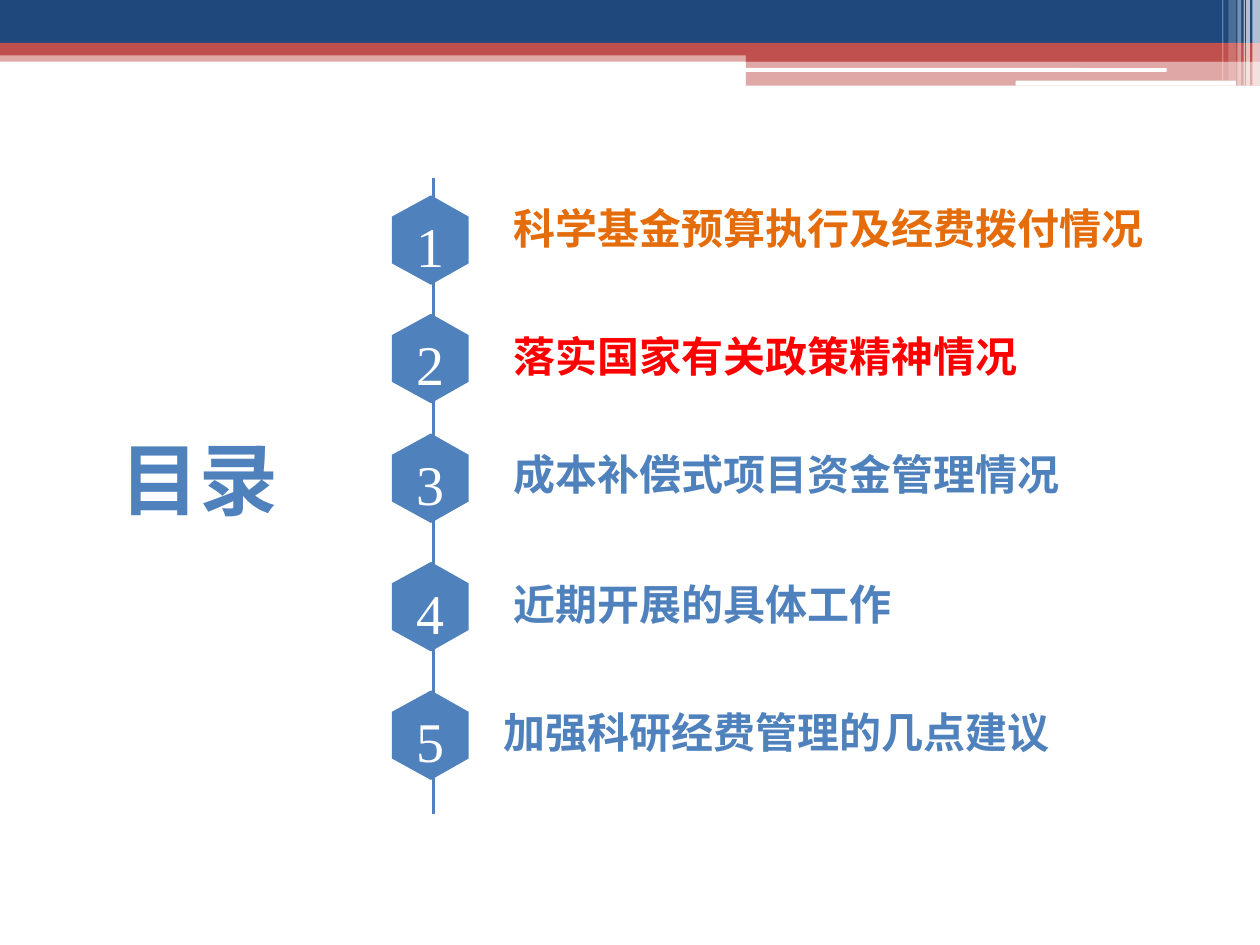
import dataclasses

import lxml.etree
import pptx
import pptx.dml.color
import pptx.enum.shapes
import pptx.enum.text
import pptx.oxml.ns
import pptx.util

RGBColor = pptx.dml.color.RGBColor
Shapes = pptx.enum.shapes.MSO_SHAPE
Align = pptx.enum.text.PP_ALIGN

EMU_PER_PX = 9144  # 100 px to the inch

NAVY = RGBColor(0x1F, 0x49, 0x7D)
BRICK = RGBColor(0xC0, 0x50, 0x4D)
WHITE = RGBColor(0xFF, 0xFF, 0xFF)
BLUE = RGBColor(0x4F, 0x81, 0xBD)
ORANGE = RGBColor(0xE4, 0x6C, 0x0A)
RED = RGBColor(0xFF, 0x00, 0x00)

SERIF = "Times New Roman"
SANS = "Noto Sans CJK SC"

HEXAGON_LEFT, HEXAGON_WIDTH, HEXAGON_HEIGHT = 311, 61, 71
LABEL_HEIGHT = 50


@dataclasses.dataclass
class Band:
    left: int
    top: int
    width: int
    height: int
    color: RGBColor
    opacity: int = 100
    rounded: bool = False


@dataclasses.dataclass
class Topic:
    text: str
    hexagon_top: int
    label_top: int
    label_left: int = 398
    color: RGBColor = BLUE


BANDS = [
    Band(0, 40, 1000, 9, BRICK, 50),
    Band(0, 0, 1000, 34, NAVY),
    Band(0, 34, 1000, 10, BRICK),
    Band(592, 39, 408, 10, BRICK),
    Band(592, 48, 408, 20, BRICK, 50),
    Band(591, 54, 335, 3, WHITE, rounded=True),
    Band(806, 64, 175, 4, WHITE, rounded=True),
    Band(994, 0, 6, 68, WHITE, 65),
    Band(989, 0, 3, 68, WHITE, 65),
    Band(987, 0, 1, 68, WHITE, 60),
    Band(982, 0, 3, 68, WHITE, 40),
    Band(975, 0, 6, 64, WHITE, 20),
    Band(970, 0, 1, 64, WHITE, 30),
]

TOPICS = [
    Topic("科学基金预算执行及经费拨付情况", 155, 156, color=ORANGE),
    Topic("落实国家有关政策精神情况", 249, 257, color=RED),
    Topic("成本补偿式项目资金管理情况", 344, 351),
    Topic("近期开展的具体工作", 446, 454),
    Topic("加强科研经费管理的几点建议", 548, 556, label_left=390),
]


def px(length: int) -> pptx.util.Emu:
    return pptx.util.Emu(length * EMU_PER_PX)


def paint(shape, color: RGBColor, opacity: int = 100) -> None:
    shape.shadow.inherit = False
    shape.fill.solid()
    shape.fill.fore_color.rgb = color
    shape.line.fill.background()
    if opacity < 100:
        color_node = shape.fill._xPr.find(".//" + pptx.oxml.ns.qn("a:srgbClr"))
        alpha = lxml.etree.SubElement(color_node, pptx.oxml.ns.qn("a:alpha"))
        alpha.set("val", str(opacity * 1000))


def write(shape, text: str, size: int, color: RGBColor, font: str = SERIF,
          bold: bool = True, align=Align.LEFT) -> None:
    """Put one unwrapped line in the shape, centred vertically."""
    frame = shape.text_frame
    frame.word_wrap = False
    frame.auto_size = pptx.enum.text.MSO_AUTO_SIZE.NONE
    frame.vertical_anchor = pptx.enum.text.MSO_ANCHOR.MIDDLE
    para = frame.paragraphs[0]
    para.alignment = align
    run = para.add_run()
    run.text = text
    run.font.size = pptx.util.Pt(size)
    run.font.bold = bold
    run.font.name = font
    run.font.color.rgb = color
    east_asian = lxml.etree.SubElement(run.font._element, pptx.oxml.ns.qn("a:ea"))
    east_asian.set("typeface", SANS)


def draw_band(slide, band: Band) -> None:
    kind = Shapes.ROUNDED_RECTANGLE if band.rounded else Shapes.RECTANGLE
    box = slide.shapes.add_shape(
        kind, px(band.left), px(band.top), px(band.width), px(band.height))
    paint(box, band.color, band.opacity)


def draw_spine(slide) -> None:
    spine = slide.shapes.add_connector(
        pptx.enum.shapes.MSO_CONNECTOR.STRAIGHT, px(344), px(141), px(344), px(646))
    spine.line.color.rgb = BLUE
    spine.line.width = pptx.util.Pt(1.5)
    lxml.etree.SubElement(spine._element.spPr, pptx.oxml.ns.qn("a:effectLst"))


def draw_hexagon(slide, top: int, number: int) -> None:
    left, right = HEXAGON_LEFT, HEXAGON_LEFT + HEXAGON_WIDTH
    middle, bottom = (left + right + 1) // 2, top + HEXAGON_HEIGHT
    shoulder = HEXAGON_HEIGHT // 4
    builder = slide.shapes.build_freeform(middle, top, scale=EMU_PER_PX)
    builder.add_line_segments([
        (right, top + shoulder), (right, bottom - shoulder), (middle, bottom),
        (left, bottom - shoulder), (left, top + shoulder)], close=True)
    hexagon = builder.convert_to_shape()
    paint(hexagon, BLUE)
    write(hexagon, str(number), 32, WHITE, bold=False, align=Align.CENTER)
    hexagon.text_frame.margin_top = px(8)
    hexagon.text_frame.margin_bottom = 0


def draw_label(slide, topic: Topic) -> None:
    width = 34 * len(topic.text) + 18
    label = slide.shapes.add_textbox(
        px(topic.label_left), px(topic.label_top), px(width), px(LABEL_HEIGHT))
    write(label, topic.text, 24, topic.color)


def draw_title(slide) -> None:
    title = slide.shapes.title
    title.left, title.top, title.width, title.height = map(px, (86, 336, 147, 86))
    write(title, "目录", 45, BLUE, font=SANS)


def main() -> None:
    deck = pptx.Presentation()
    deck.slide_width, deck.slide_height = px(1000), px(750)
    slide = deck.slides.add_slide(deck.slide_layouts[5])
    for band in BANDS:
        draw_band(slide, band)
    draw_title(slide)
    draw_spine(slide)
    for number, topic in enumerate(TOPICS, start=1):
        draw_hexagon(slide, topic.hexagon_top, number)
        draw_label(slide, topic)
    deck.save("out.pptx")


if __name__ == "__main__":
    main()
